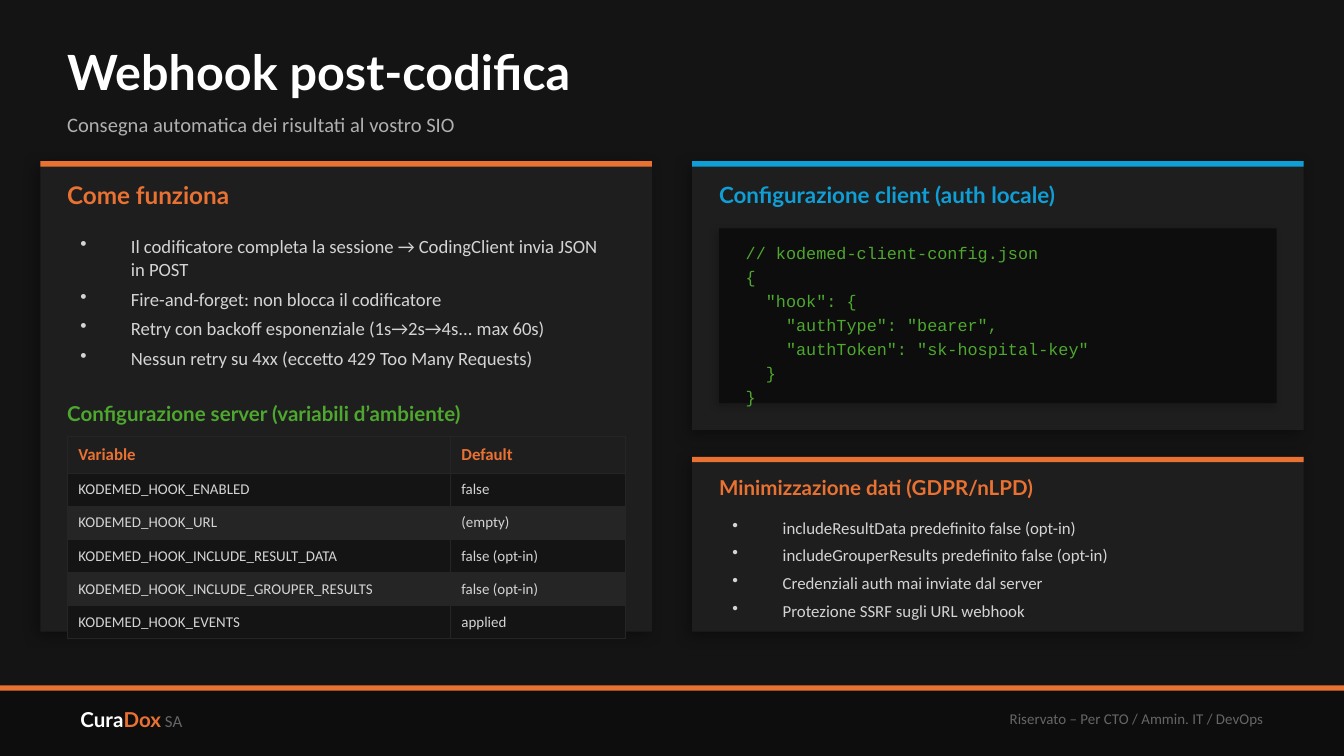
from typing import NamedTuple

from lxml import etree
from pptx import Presentation
from pptx.dml.color import RGBColor
from pptx.enum.shapes import MSO_SHAPE
from pptx.enum.text import MSO_ANCHOR, PP_ALIGN
from pptx.oxml.ns import qn
from pptx.util import Inches, Pt

RECTANGLE = MSO_SHAPE.RECTANGLE
TOP, MIDDLE = MSO_ANCHOR.TOP, MSO_ANCHOR.MIDDLE
LEFT, RIGHT = PP_ALIGN.LEFT, PP_ALIGN.RIGHT

BACKGROUND = RGBColor(0x14, 0x14, 0x14)
BLACK = RGBColor(0x0D, 0x0D, 0x0D)
PANEL = RGBColor(0x1E, 0x1E, 0x1E)
STRIPE = RGBColor(0x25, 0x25, 0x25)
ORANGE = RGBColor(0xE9, 0x71, 0x32)
BLUE = RGBColor(0x0F, 0x9E, 0xD5)
GREEN = RGBColor(0x4E, 0xA7, 0x2E)
WHITE = RGBColor(0xFF, 0xFF, 0xFF)
LIGHT = RGBColor(0xD4, 0xD4, 0xD4)
SILVER = RGBColor(0xB0, 0xB0, 0xB0)
GREY = RGBColor(0x66, 0x66, 0x66)

HEADING_FONT, BODY_FONT, CODE_FONT = "Lato", "Calibri", "Courier New"
SLIDE_WIDTH = Inches(10)
SLIDE_HEIGHT = SLIDE_WIDTH * 9 // 16
BAR = 0.04
PADDING = 0.2
INDENT = Pt(27)


class Box(NamedTuple):
    left: float
    top: float
    width: float
    height: float

    def lengths(self):
        return [Inches(value) for value in self]


class Shadow(NamedTuple):
    opacity: int
    blur: int
    distance: int


class Card(NamedTuple):
    box: Box
    accent: RGBColor
    title: str
    title_size: int
    title_height: float


CARD_SHADOW = Shadow(35, 8, 3)
CODE_SHADOW = Shadow(20, 4, 2)

CARDS = [
    Card(Box(0.3, 1.2, 4.55, 3.5), ORANGE, "Come funziona", 13, 0.3),
    Card(Box(5.15, 1.2, 4.55, 2), BLUE, "Configurazione client (auth locale)", 12, 0.3),
    Card(Box(5.15, 3.4, 4.55, 1.3), ORANGE, "Minimizzazione dati (GDPR/nLPD)", 11, 0.25),
]

STEPS = """Il codificatore completa la sessione → CodingClient invia JSON in POST
Fire-and-forget: non blocca il codificatore
Retry con backoff esponenziale (1s→2s→4s... max 60s)
Nessun retry su 4xx (eccetto 429 Too Many Requests)"""

PRIVACY = """includeResultData predefinito false (opt-in)
includeGrouperResults predefinito false (opt-in)
Credenziali auth mai inviate dal server
Protezione SSRF sugli URL webhook"""

CLIENT_CONFIG = """// kodemed-client-config.json
{
  "hook": {
    "authType": "bearer",
    "authToken": "sk-hospital-key"
  }
}"""

VARIABLES = [
    ("Variable", "Default"),
    ("KODEMED_HOOK_ENABLED", "false"),
    ("KODEMED_HOOK_URL", "(empty)"),
    ("KODEMED_HOOK_INCLUDE_RESULT_DATA", "false (opt-in)"),
    ("KODEMED_HOOK_INCLUDE_GROUPER_RESULTS", "false (opt-in)"),
    ("KODEMED_HOOK_EVENTS", "applied"),
]


def write(frame, text: str, *, size: float, color: RGBColor, font: str = BODY_FONT,
          bold: bool = False, align=LEFT, after: float = 0, bullet: bool = False,
          continued: bool = False) -> None:
    for number, line in enumerate(text.split("\n")):
        paragraph = frame.add_paragraph() if number else frame.paragraphs[-1]
        if not continued:
            paragraph.alignment = align
            paragraph.space_after = Pt(after)
        if bullet:
            properties = paragraph._p.get_or_add_pPr()
            properties.set("marL", str(INDENT))
            properties.set("indent", str(-INDENT))
            etree.SubElement(properties, qn("a:buSzPct"), val="100000")
            etree.SubElement(properties, qn("a:buChar"), char="•")
        run = paragraph.add_run()
        run.text = line
        run.font.size = Pt(size)
        run.font.name = font
        run.font.bold = bold
        run.font.color.rgb = color


def add_frame(slide, box: Box, anchor=MIDDLE, inset: bool = False):
    frame = slide.shapes.add_textbox(*box.lengths()).text_frame
    frame.word_wrap = True
    frame.vertical_anchor = anchor
    if not inset:
        frame.margin_left = frame.margin_right = 0
        frame.margin_top = frame.margin_bottom = 0
    return frame


def add_block(slide, box: Box, color: RGBColor, shadow: Shadow | None = None) -> None:
    block = slide.shapes.add_shape(RECTANGLE, *box.lengths())
    block.fill.solid()
    block.fill.fore_color.rgb = color
    block.line.fill.background()
    block.shadow.inherit = False
    if shadow:
        effects = block._element.spPr.find(qn("a:effectLst"))
        outer = etree.SubElement(
            effects, qn("a:outerShdw"), blurRad=str(Pt(shadow.blur)),
            dist=str(Pt(shadow.distance)), dir=str(135 * 60000),
            algn="bl", rotWithShape="0")
        black = etree.SubElement(outer, qn("a:srgbClr"), val="000000")
        etree.SubElement(black, qn("a:alpha"), val=str(shadow.opacity * 1000))


def add_card(slide, card: Card) -> None:
    left, top, width, _ = card.box
    add_block(slide, card.box, PANEL, CARD_SHADOW)
    add_block(slide, Box(left, top, width, BAR), card.accent)
    title = Box(left + PADDING, top + 0.1, width - 2 * PADDING, card.title_height)
    write(add_frame(slide, title), card.title, size=card.title_size,
          color=card.accent, font=HEADING_FONT, bold=True)


def add_borders(cell) -> None:
    properties = cell._tc.get_or_add_tcPr()
    for side in ("lnL", "lnR", "lnT", "lnB"):
        border = etree.SubElement(properties, qn(f"a:{side}"), w=str(Pt(0.5)))
        fill = etree.SubElement(border, qn("a:solidFill"))
        etree.SubElement(fill, qn("a:srgbClr"), val=str(STRIPE))


def add_variables(slide, box: Box, widths: tuple[float, ...]) -> None:
    table = slide.shapes.add_table(len(VARIABLES), len(widths), *box.lengths()).table
    table.first_row = table.horz_banding = False
    for column, width in zip(table.columns, widths):
        column.width = Inches(width)
    table.rows[0].height = Inches(0.27)
    for index, values in enumerate(VARIABLES):
        header = index == 0
        shade = PANEL if header else BACKGROUND if index % 2 else STRIPE
        for cell, value in zip(table.rows[index].cells, values):
            add_borders(cell)
            cell.fill.solid()
            cell.fill.fore_color.rgb = shade
            cell.vertical_anchor = MIDDLE
            cell.margin_left = cell.margin_right = Pt(6)
            cell.margin_top = cell.margin_bottom = Pt(4)
            write(cell.text_frame, value, size=9 if header else 8,
                  color=ORANGE if header else LIGHT, bold=header)


def add_footer(slide) -> None:
    add_block(slide, Box(0, 5.1, 10, 0.53), BLACK)
    add_block(slide, Box(0, 5.1, 10, BAR), ORANGE)
    company = add_frame(slide, Box(0.5, 5.15, 3, 0.4), inset=True)
    write(company, "Cura", size=11, color=WHITE, font=HEADING_FONT, bold=True)
    write(company, "Dox", size=11, color=ORANGE, font=HEADING_FONT, bold=True, continued=True)
    write(company, " SA", size=9, color=GREY, continued=True)
    write(add_frame(slide, Box(5.5, 5.15, 4, 0.4), inset=True),
          "Riservato – Per CTO / Ammin. IT / DevOps", size=8, color=GREY, align=RIGHT)


def main() -> None:
    deck = Presentation()
    deck.slide_width, deck.slide_height = SLIDE_WIDTH, SLIDE_HEIGHT
    slide = deck.slides.add_slide(deck.slide_layouts[6])
    slide.background.fill.solid()
    slide.background.fill.fore_color.rgb = BACKGROUND

    add_footer(slide)
    write(add_frame(slide, Box(0.5, 0.25, 9, 0.55)), "Webhook post-codifica",
          size=26, color=WHITE, font=HEADING_FONT, bold=True)
    write(add_frame(slide, Box(0.5, 0.75, 9, 0.35)),
          "Consegna automatica dei risultati al vostro SIO", size=11, color=SILVER)
    for card in CARDS:
        add_card(slide, card)

    write(add_frame(slide, Box(0.5, 1.7, 4.15, 1.2), TOP, inset=True), STEPS,
          size=10, color=LIGHT, after=4, bullet=True)
    write(add_frame(slide, Box(0.5, 2.95, 4.15, 0.25)),
          "Configurazione server (variabili d’ambiente)",
          size=11, color=GREEN, font=HEADING_FONT, bold=True)
    add_variables(slide, Box(0.5, 3.25, 4.15, 1.48), (2.85, 1.3))

    add_block(slide, Box(5.35, 1.7, 4.15, 1.3), BLACK, CODE_SHADOW)
    write(add_frame(slide, Box(5.45, 1.76, 3.95, 1.18), TOP, inset=True), CLIENT_CONFIG,
          size=9, color=GREEN, font=CODE_FONT, after=2)
    write(add_frame(slide, Box(5.35, 3.8, 4.15, 0.8), TOP, inset=True), PRIVACY,
          size=9, color=LIGHT, after=4, bullet=True)
    deck.save("out.pptx")


if __name__ == "__main__":
    main()
